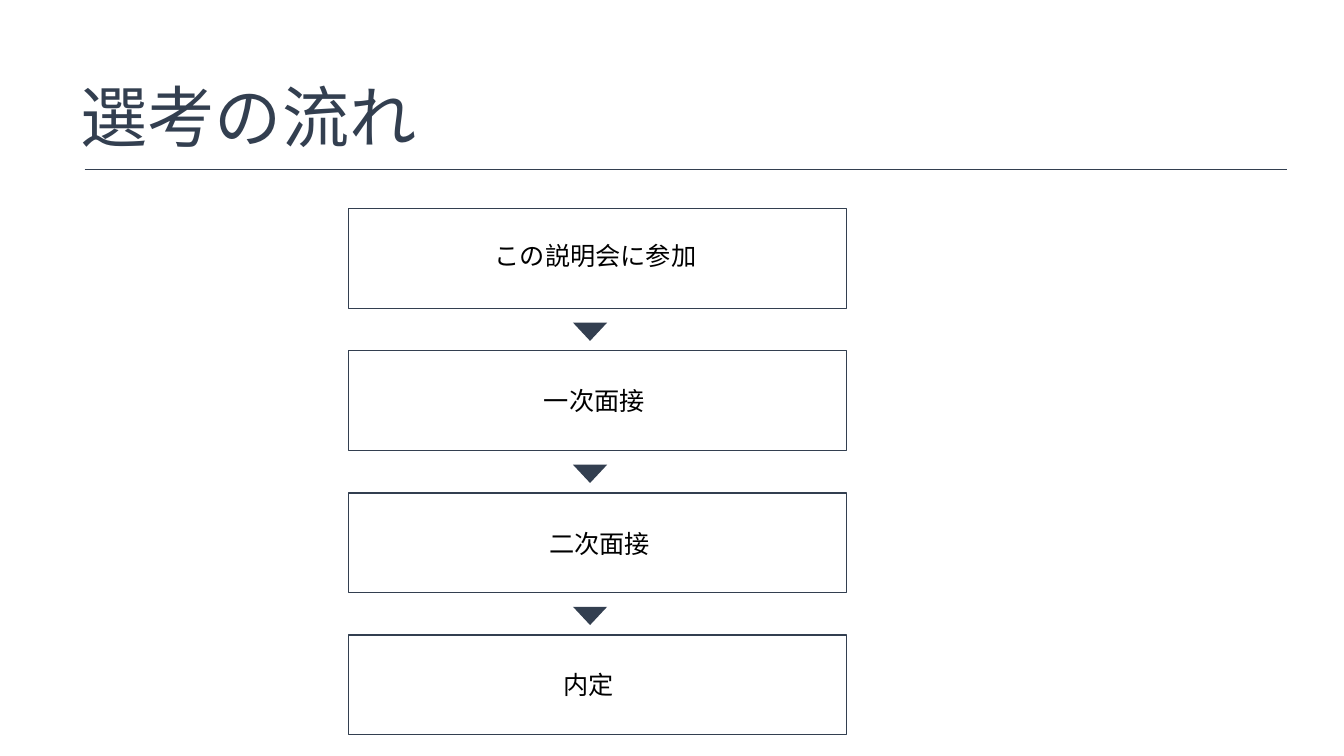
from dataclasses import dataclass

import lxml.etree
import pptx
import pptx.dml.color
import pptx.enum.shapes
import pptx.enum.text
import pptx.oxml.ns
import pptx.shapes.autoshape
import pptx.slide
import pptx.util

Cm = pptx.util.Cm
Pt = pptx.util.Pt
Shapes = pptx.enum.shapes.MSO_SHAPE
qn = pptx.oxml.ns.qn


@dataclass(frozen=True)
class Theme:
    navy: pptx.dml.color.RGBColor = pptx.dml.color.RGBColor(0x33, 0x3F, 0x50)
    black: pptx.dml.color.RGBColor = pptx.dml.color.RGBColor(0, 0, 0)
    font: str = "Noto Sans CJK JP"
    title_size: float = 48
    step_size: float = 18
    rule_width: float = 0.5
    box_width: float = 1


@dataclass(frozen=True)
class Label:
    text: str
    left: float
    top: float
    width: float
    height: float = 1.02


THEME = Theme()
TITLE = Label("選考の流れ", 1.78, 1.78, 9.07, 2.31)
STEPS = [
    Label("この説明会に参加", 12.22, 5.92, 5.64),
    Label("一次面接", 13.46, 9.58, 3.15),
    Label("二次面接", 13.59, 13.18, 3.07),
    Label("内定", 13.94, 16.74, 1.85),
]

# Vertical rhythm of the flow, in centimetres
STEP_PITCH = 3.58
BOX_LEFT, BOX_TOP, BOX_WIDTH, BOX_HEIGHT = 8.79, 5.26, 12.55, 2.51
ARROW_LEFT, ARROW_TOP, ARROW_WIDTH, ARROW_HEIGHT = 14.44, 8.13, 0.86, 0.46


def add_label(slide: pptx.slide.Slide, label: Label, size: float,
              color: pptx.dml.color.RGBColor) -> None:
    box = slide.shapes.add_textbox(Cm(label.left), Cm(label.top),
                                   Cm(label.width), Cm(label.height))
    frame = box.text_frame
    frame.word_wrap = False
    frame.auto_size = pptx.enum.text.MSO_AUTO_SIZE.SHAPE_TO_FIT_TEXT
    paragraph = frame.paragraphs[0]
    paragraph.text = label.text
    font = paragraph.font
    font.name = THEME.font
    font.size = Pt(size)
    font.color.rgb = color
    # Japanese glyphs take the East Asian typeface
    for properties in (paragraph.runs[0].font, font):
        properties.name = THEME.font
    for run_properties in paragraph._p.iter(qn("a:rPr"), qn("a:defRPr")):
        east_asian = lxml.etree.SubElement(run_properties, qn("a:ea"))
        east_asian.set("typeface", THEME.font)


def add_title_rule(slide: pptx.slide.Slide) -> None:
    rule = slide.shapes.add_connector(
        pptx.enum.shapes.MSO_CONNECTOR.STRAIGHT,
        Cm(2.13), Cm(4.27), Cm(32.44), Cm(4.27))
    rule.line.color.rgb = THEME.navy
    rule.line.width = Pt(THEME.rule_width)
    lxml.etree.SubElement(rule._element.spPr, qn("a:effectLst"))


def add_step_box(slide: pptx.slide.Slide, index: int) -> None:
    box = slide.shapes.add_shape(
        Shapes.RECTANGLE, Cm(BOX_LEFT), Cm(BOX_TOP + index * STEP_PITCH),
        Cm(BOX_WIDTH), Cm(BOX_HEIGHT))
    box.shadow.inherit = False
    box.fill.background()
    box.line.color.rgb = THEME.navy
    box.line.width = Pt(THEME.box_width)


def add_down_arrow(slide: pptx.slide.Slide, index: int) -> None:
    arrow = slide.shapes.add_shape(
        Shapes.ISOSCELES_TRIANGLE, Cm(ARROW_LEFT),
        Cm(ARROW_TOP + index * STEP_PITCH), Cm(ARROW_WIDTH), Cm(ARROW_HEIGHT))
    arrow.rotation = 180
    arrow.shadow.inherit = False
    arrow.fill.solid()
    arrow.fill.fore_color.rgb = THEME.navy
    arrow.line.fill.background()


def main() -> None:
    deck = pptx.Presentation()
    deck.slide_width, deck.slide_height = Cm(33.87), Cm(19.05)
    slide = deck.slides.add_slide(deck.slide_layouts[6])

    # Heading
    add_label(slide, TITLE, THEME.title_size, THEME.navy)
    add_title_rule(slide)

    # Selection steps
    for step in STEPS:
        add_label(slide, step, THEME.step_size, THEME.black)
    for index in range(len(STEPS)):
        add_step_box(slide, index)

    # Arrows between the steps
    for index in range(len(STEPS) - 1):
        add_down_arrow(slide, index)

    deck.save("out.pptx")


if __name__ == "__main__":
    main()
